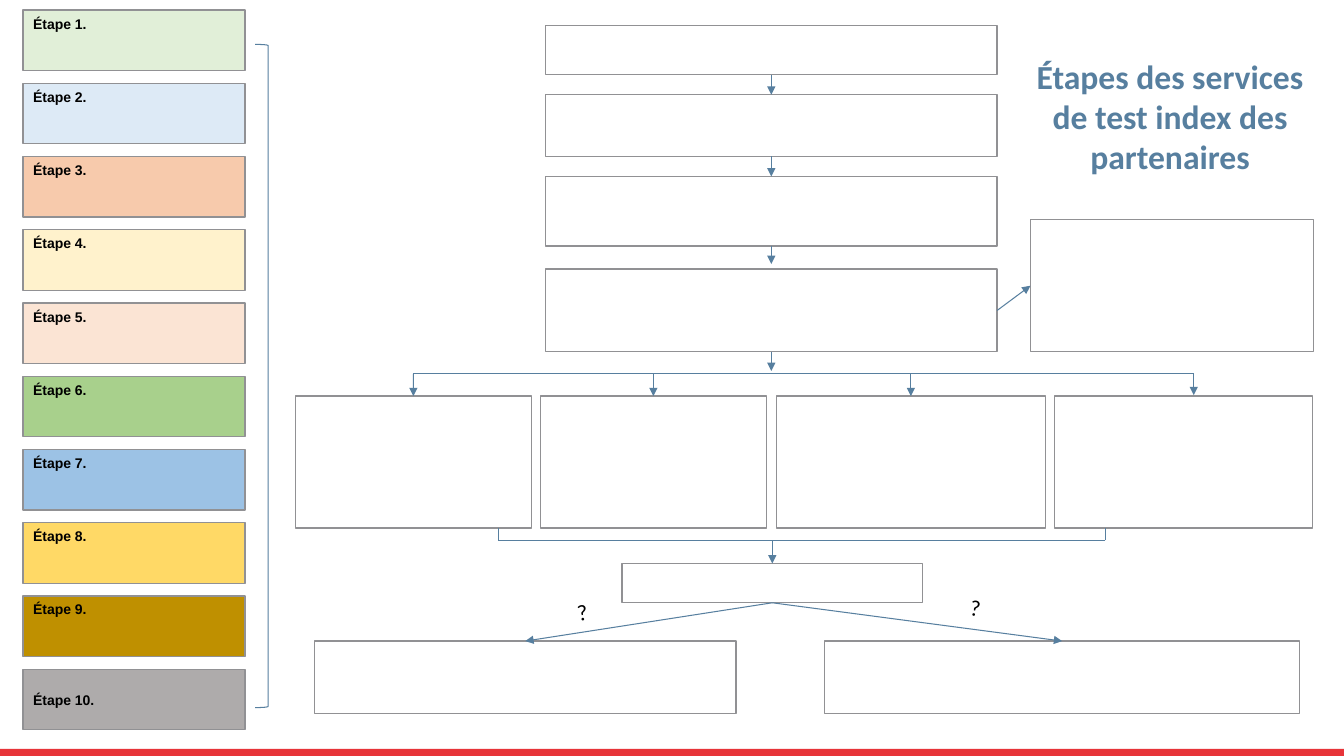
from dataclasses import dataclass

from lxml.etree import SubElement
from pptx import Presentation
from pptx.dml.color import RGBColor
from pptx.enum.shapes import MSO_CONNECTOR, MSO_SHAPE
from pptx.enum.text import MSO_ANCHOR, MSO_AUTO_SIZE, PP_ALIGN
from pptx.oxml.ns import qn
from pptx.util import Inches, Pt

TOP, LEFT, BOTTOM, RIGHT = range(4)


@dataclass(frozen=True)
class Theme:
    title: str = "577F9F"
    arrow: str = "577F9F"
    border: str = "919194"
    text: str = "000000"
    paper: str = "FFFFFF"
    footer: str = "E73439"
    steps: tuple = ("E1EFD8", "DDEAF6", "F7CAAC", "FFF2CC", "FBE4D4",
                    "A8D08C", "9CC2E5", "FFD966", "BF9000", "AEABAB")
    step_font: str = "Arial"
    main_font: str = "Calibri"
    title_size: int = 24
    mark_size: int = 16
    step_size: int = 10
    border_width: float = 1
    arrow_width: float = 0.75


@dataclass(frozen=True)
class Box:
    left: float
    top: float
    width: float
    height: float

    def inside(self, left, top, width, height):
        return Box(self.left + left, self.top + top, width, height)

    def point(self, left, top):
        return self.left + left, self.top + top

    def lengths(self):
        return [Inches(n) for n in (self.left, self.top, self.width, self.height)]


THEME = Theme()


def color(value):
    return RGBColor.from_string(value)


def add_rectangle(slide, box, fill=None, border=THEME.border):
    shape = slide.shapes.add_shape(MSO_SHAPE.RECTANGLE, *box.lengths())
    shape.shadow.inherit = False
    if fill:
        shape.fill.solid()
        shape.fill.fore_color.rgb = color(fill)
    else:
        shape.fill.background()
    if border:
        shape.line.color.rgb = color(border)
        shape.line.width = Pt(THEME.border_width)
    else:
        shape.line.fill.background()
    return shape


def write(shape, text, font, size, ink, bold, align, anchor):
    frame = shape.text_frame
    frame.word_wrap = True
    frame.vertical_anchor = anchor
    paragraph = frame.paragraphs[0]
    paragraph.alignment = align
    run = paragraph.add_run()
    run.text = text
    run.font.name = font
    run.font.size = Pt(size)
    run.font.bold = bold
    run.font.color.rgb = color(ink)


def add_line(slide, start, end, arrow=True):
    connector = slide.shapes.add_connector(MSO_CONNECTOR.STRAIGHT, 0, 0, 0, 0)
    if isinstance(start[0], float):
        connector.begin_x, connector.begin_y = map(Inches, start)
    else:
        connector.begin_connect(*start)
    if isinstance(end[0], float):
        connector.end_x, connector.end_y = map(Inches, end)
    else:
        connector.end_connect(*end)
    connector.line.color.rgb = color(THEME.arrow)
    connector.line.width = Pt(THEME.arrow_width)
    properties = connector.line._get_or_add_ln()
    if arrow:
        SubElement(properties, qn("a:tailEnd"), type="triangle")
    SubElement(properties.getparent(), qn("a:effectLst"))


def add_title(slide, box):
    title = slide.shapes.title
    title.left, title.top, title.width, title.height = box.lengths()
    title.fill.solid()
    title.fill.fore_color.rgb = color(THEME.paper)
    title.text_frame.auto_size = MSO_AUTO_SIZE.NONE
    write(title, "Étapes des services de test index des partenaires", THEME.main_font,
          THEME.title_size, THEME.title, True, PP_ALIGN.CENTER, MSO_ANCHOR.MIDDLE)


def add_steps(slide, box):
    height = 0.6
    pitch = (box.height - height) / (len(THEME.steps) - 1)
    for index, fill in enumerate(THEME.steps):
        step = add_rectangle(slide, box.inside(0, index * pitch, 2.2, height), fill)
        last = index == len(THEME.steps) - 1
        write(step, f"Étape {index + 1}.", THEME.step_font, THEME.step_size, THEME.text,
              True, PP_ALIGN.LEFT, MSO_ANCHOR.MIDDLE if last else MSO_ANCHOR.TOP)
    bracket = slide.shapes.add_shape(MSO_SHAPE.RIGHT_BRACKET,
                                     *box.inside(2.3, 0.34, 0.13, 6.58).lengths())
    bracket.adjustments[0] = 0.083
    bracket.shadow.inherit = False
    bracket.fill.background()
    bracket.line.color.rgb = color(THEME.arrow)
    bracket.line.width = Pt(THEME.arrow_width)


def add_stack(slide, box):
    rows = ((0, 0.49), (0.69, 0.61), (1.5, 0.69), (2.42, 0.82))
    first, second, third, fourth = [
        add_rectangle(slide, box.inside(0, top, box.width, height)) for top, height in rows]
    side = add_rectangle(slide, box.inside(4.81, 1.93, 2.81, 1.31))
    middle = box.width / 2
    add_line(slide, (first, BOTTOM), (second, TOP))
    add_line(slide, (second, BOTTOM), (third, TOP))
    add_line(slide, (third, BOTTOM), box.point(middle, 2.37))
    add_line(slide, (fourth, BOTTOM), box.point(middle, 3.43))
    add_line(slide, (fourth, RIGHT), (side, LEFT))


def add_branches(slide, box):
    columns = ((0, 2.34), (2.43, 2.24), (4.77, 2.67), (7.53, 2.56))
    rail = 0.22
    last_arrow = 8.91
    for left, width in columns:
        branch = add_rectangle(slide, box.inside(left, 0.44, width, 1.31))
        if (left, width) == columns[-1]:
            add_line(slide, box.point(last_arrow, rail), box.point(last_arrow, 0.43))
        else:
            add_line(slide, box.point(left + width / 2, rail), (branch, TOP))
    add_line(slide, box.point(columns[0][1] / 2, rail), box.point(last_arrow, rail), False)


def add_outcomes(slide, box):
    join = 0.12
    decision = add_rectangle(slide, box.inside(3.05, 0.35, 2.98, 0.39))
    ends = 1.82, 7.84
    add_line(slide, box.point(ends[0], join), box.point(ends[1], join), False)
    for left in ends:
        add_line(slide, box.point(left, join), box.point(left, 0), False)
    add_line(slide, box.point(4.54, join), (decision, TOP))
    for left, width in ((0, 4.18), (5.06, 4.71)):
        outcome = add_rectangle(slide, box.inside(left, 1.12, width, 0.72))
        add_line(slide, (decision, BOTTOM), (outcome, TOP))
    for left, top, rotation in ((2.29, 0.65, -9.2), (6.19, 0.6, 8.2)):
        mark = slide.shapes.add_textbox(*box.inside(left, top, 0.73, 0.37).lengths())
        mark.rotation = rotation
        mark.text_frame.auto_size = MSO_AUTO_SIZE.SHAPE_TO_FIT_TEXT
        write(mark, "?", THEME.main_font, THEME.mark_size, THEME.text, False,
              PP_ALIGN.CENTER, MSO_ANCHOR.TOP)


def add_footer(slide, box):
    add_rectangle(slide, box, THEME.footer, None)


def main():
    presentation = Presentation()
    presentation.slide_width = Inches(13.33)
    presentation.slide_height = Inches(7.5)
    slide = presentation.slides.add_slide(presentation.slide_layouts[5])
    add_title(slide, Box(10.08, 0.36, 3.05, 1.58))
    add_steps(slide, Box(0.23, 0.1, 2.43, 7.14))
    add_stack(slide, Box(5.41, 0.25, 4.48, 3.24))
    add_branches(slide, Box(2.93, 3.49, 10.09, 1.75))
    add_outcomes(slide, Box(3.12, 5.24, 9.77, 1.84))
    add_footer(slide, Box(0, 7.43, 13.33, 0.08))
    presentation.save("out.pptx")


if __name__ == "__main__":
    main()
